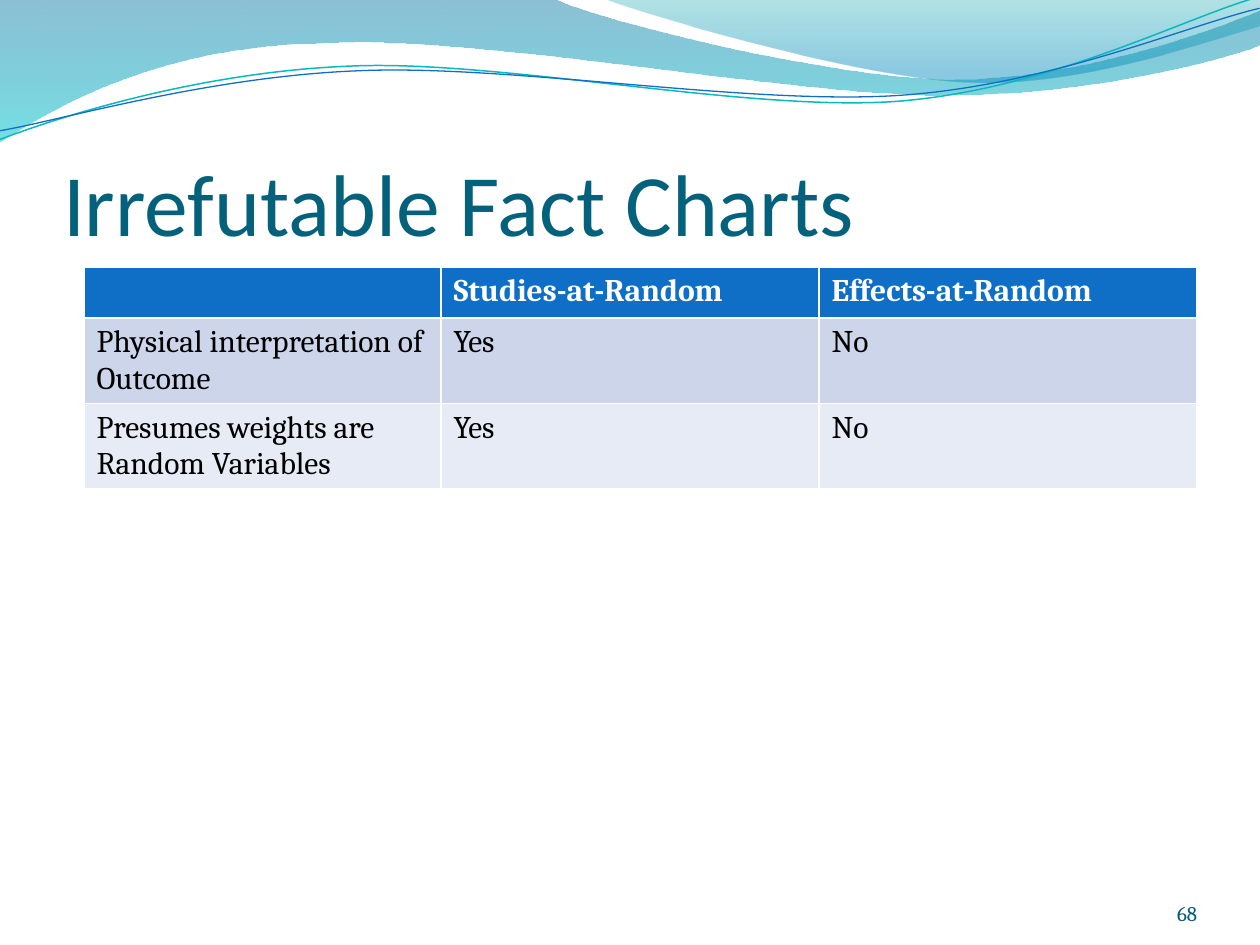
"""Builds the slide "Irrefutable Fact Charts" with its wave header and comparison table."""
from dataclasses import dataclass

from lxml import etree
from pptx import Presentation
from pptx.dml.color import RGBColor
from pptx.enum.text import MSO_ANCHOR, PP_ALIGN
from pptx.oxml.ns import qn
from pptx.util import Pt

BOTTOM = MSO_ANCHOR.BOTTOM
LEFT = PP_ALIGN.LEFT
RIGHT = PP_ALIGN.RIGHT
PX = 914400 / 126


@dataclass(frozen=True)
class Theme:
    heading_font: str = "Calibri"
    body_font: str = "Cambria"
    title_size: int = 50
    table_size: int = 18
    number_size: int = 12
    title: str = "04617B"
    number: str = "045D75"
    header: str = "0F6FC6"
    bands: tuple = ("CCD5EA", "E7EBF5")
    white: str = "FFFFFF"
    black: str = "000000"
    teal_line: str = "0AB8BF"
    wide_wave: tuple = ((0, "0074A1", 45), (1, "00C6CF", 55))
    small_wave: tuple = ((0, "00A1A9", 30), (0.8, "008BBF", 45))


theme = Theme()


def add_wave(slide, start, segments, closed):
    """Draw straight (one point) and cubic (three point) segments as one outline."""
    builder = slide.shapes.build_freeform(*start, scale=PX)
    builder.add_line_segments([point for segment in segments for point in segment], close=closed)
    wave = builder.convert_to_shape()
    wave.shadow.inherit = False
    steps = iter(list(wave.element.iter(qn("a:lnTo"))))
    for segment in segments:
        corners = [next(steps) for _ in segment]
        if len(corners) == 3:
            curve = etree.Element(qn("a:cubicBezTo"))
            corners[0].addprevious(curve)
            for corner in corners:
                curve.append(corner[0])
                corner.getparent().remove(corner)
    return wave


def add_text(frame, text, font, size, color, bold=False, align=LEFT):
    """Put one formatted run into the first paragraph of a frame."""
    paragraph = frame.paragraphs[0]
    paragraph.alignment = align
    run = paragraph.add_run()
    run.text = text
    run.font.name = font
    run.font.size = Pt(size)
    run.font.bold = bold
    run.font.color.rgb = RGBColor.from_string(color)


deck = Presentation()
deck.slide_width = round(1260 * PX)
deck.slide_height = round(945 * PX)
slide = deck.slides.add_slide(deck.slide_layouts[5])

filled_waves = (
    ((-1, -1), (
        ((554, -1),),
        ((600, 21), (837, 79), (955, 79)),
        ((1075, 79), (1207, 33), (1260, 11)),
        ((1261, 45),),
        ((1239, 55), (1096, 96), (940, 95)),
        ((784, 95), (481, 35), (324, 43)),
        ((163, 45), (58, 105), (-1, 142)),
    ), theme.wide_wave),
    ((604, -1), (
        ((641, 14), (859, 78), (969, 82)),
        ((1079, 87), (1211, 40), (1260, 26)),
        ((1260, -1),),
    ), theme.small_wave),
)
for start, segments, stops in filled_waves:
    wave = add_wave(slide, start, segments, True)
    wave.line.fill.background()
    wave.fill.gradient()
    wave.fill.gradient_angle = 270
    for stop, (position, color, _) in zip(wave.fill.gradient_stops, stops):
        stop.position = position
        stop.color.rgb = RGBColor.from_string(color)
    for tint, (_, _, opacity) in zip(wave.element.spPr.iter(qn("a:srgbClr")), stops):
        etree.SubElement(tint, qn("a:alpha"), val=str(opacity * 1000))

wave_lines = (
    ((-3, 110), (
        ((58, 90), (199, 52), (350, 53)),
        ((499, 53), (745, 118), (896, 114)),
        ((1049, 109), (1184, 45), (1260, 27)),
    ), theme.teal_line, 0.85),
    ((-2, 101), (
        ((57, 94), (207, 57), (357, 58)),
        ((509, 58), (750, 112), (902, 108)),
        ((1052, 104), (1188, 52), (1262, 38)),
    ), theme.header, 0.75),
)
for start, segments, color, width in wave_lines:
    wave = add_wave(slide, start, segments, False)
    wave.rotation = 357.3
    wave.fill.background()
    wave.line.color.rgb = RGBColor.from_string(color)
    wave.line.width = Pt(width)

title = slide.shapes.title
title.element.getparent().append(title.element)
title.left, title.top, title.width, title.height = (round(v * PX) for v in (63, 97, 1134, 157))
heading = title.text_frame
heading.word_wrap = True
heading.vertical_anchor = BOTTOM
heading.margin_left = heading.margin_right = heading.margin_bottom = 0
heading.margin_top = round(6 * PX)
add_text(heading, "Irrefutable Fact Charts", theme.heading_font, theme.title_size, theme.title)

facts = (
    ("", "Studies-at-Random", "Effects-at-Random"),
    ("Physical interpretation of Outcome", "Yes", "No"),
    ("Presumes weights are Random Variables", "Yes", "No"),
)
column_widths = (357, 378, 378)
comparison = slide.shapes.add_table(
    len(facts), len(column_widths),
    *(round(v * PX) for v in (84, 267, sum(column_widths), 228)))
table = comparison.table
for column, width in zip(table.columns, column_widths):
    column.width = round(width * PX)
for row in table.rows:
    row.height = round(51 * PX)
comparison.height = round(228 * PX)

for row_index, row_facts in enumerate(facts):
    is_header = row_index == 0
    background = theme.header if is_header else theme.bands[row_index - 1]
    for column_index, fact in enumerate(row_facts):
        cell = table.cell(row_index, column_index)
        cell.fill.solid()
        cell.fill.fore_color.rgb = RGBColor.from_string(background)
        if fact:
            add_text(cell.text_frame, fact, theme.body_font, theme.table_size,
                     theme.white if is_header else theme.black, is_header)

page_number = slide.shapes.add_textbox(*(round(v * PX) for v in (1092, 876, 105, 50))).text_frame
page_number.word_wrap = True
page_number.vertical_anchor = BOTTOM
page_number.margin_left = page_number.margin_right = 0
page_number.margin_top = page_number.margin_bottom = 0
add_text(page_number, "68", theme.body_font, theme.number_size, theme.number, align=RIGHT)

deck.save("out.pptx")
